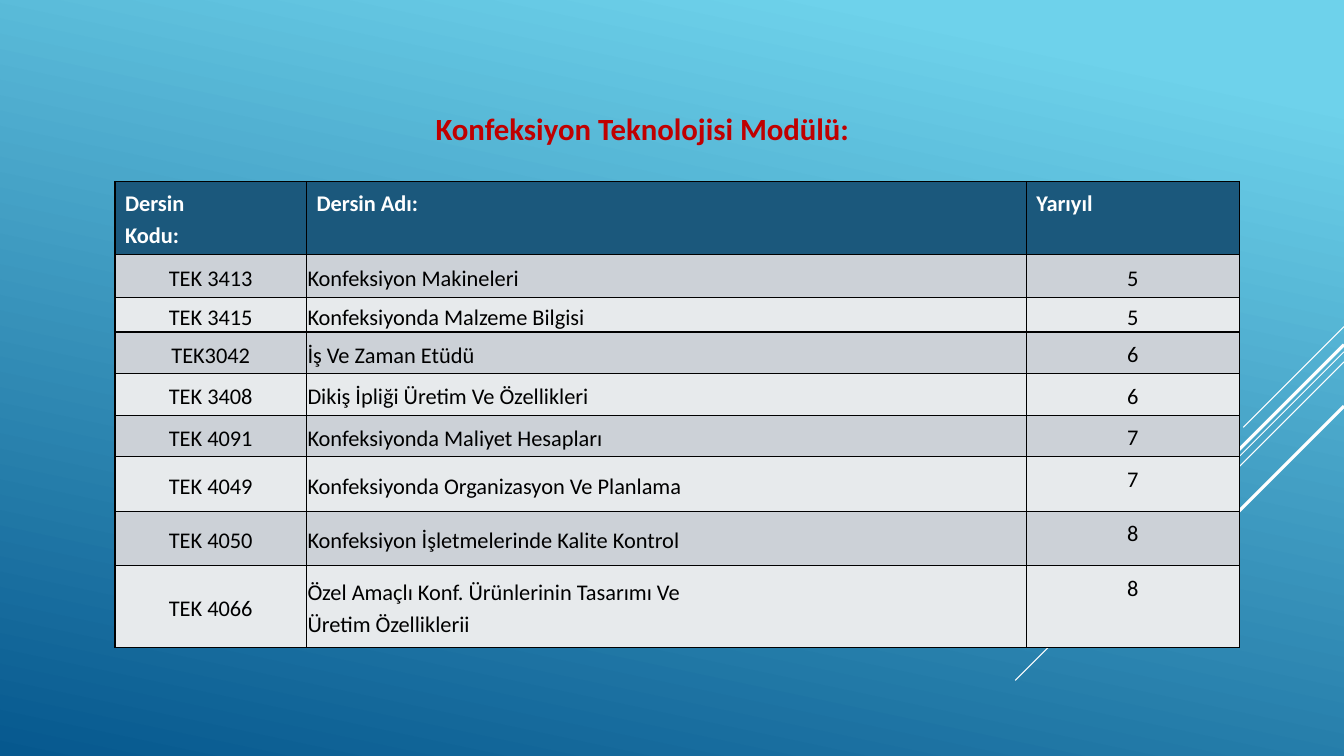
from lxml import etree
from pptx import Presentation
from pptx import util as u
from pptx.dml import color
from pptx.enum import shapes, text
from pptx.oxml import ns

TITLE = "Konfeksiyon Teknolojisi Modülü:"
HEADER = (["Dersin", "Kodu:"], ["Dersin Adı:"], ["Yarıyıl"])
COURSES = [
    ("TEK 3413", ["Konfeksiyon Makineleri"], "5"),
    ("TEK 3415", ["Konfeksiyonda Malzeme Bilgisi"], "5"),
    ("TEK3042", ["İş Ve Zaman Etüdü"], "6"),
    ("TEK 3408", ["Dikiş İpliği Üretim Ve Özellikleri"], "6"),
    ("TEK 4091", ["Konfeksiyonda Maliyet Hesapları"], "7"),
    ("TEK 4049", ["Konfeksiyonda Organizasyon Ve Planlama"], "7"),
    ("TEK 4050", ["Konfeksiyon İşletmelerinde Kalite Kontrol"], "8"),
    ("TEK 4066", ["Özel Amaçlı Konf. Ürünlerinin Tasarımı Ve", "Üretim Özelliklerii"], "8"),
]
COLUMN_WIDTHS = (1.9, 7.14, 2.11)
ROW_HEIGHTS = (0.61, 0.43, 0.34, 0.39, 0.39, 0.39, 0.54, 0.54, 0.81)
BAND_FILLS = ("CCD1D7", "E7EAEC")
BACKGROUND = ((0.1, "6ED2EB"), (1, "06588E"))
# Diagonals: height at the right edge, run to the left, line width
DIAGONALS = [(3.24, 1, 0.75), (3.49, 3.26, 0.75), (3.59, 2.07, 0.75),
             (3.42, 1.91, 2.25), (4.03, 1.39, 2.25)]
WIDTH, HEIGHT = 13.33, 7.5


def rgb(value):
    return color.RGBColor.from_string(value)


def write(frame, lines, size, hue, bold=False, align=text.PP_ALIGN.LEFT, spacing=1):
    for index, line in enumerate(lines):
        para = frame.paragraphs[0] if index == 0 else frame.add_paragraph()
        para.alignment = align
        para.line_spacing = spacing
        span = para.add_run()
        span.text = line
        span.font.name = "Calibri"
        span.font.size = u.Pt(size)
        span.font.bold = bold
        span.font.color.rgb = rgb(hue)


def add_borders(cell):
    properties = cell._tc.get_or_add_tcPr()
    for side in ("a:lnL", "a:lnR", "a:lnT", "a:lnB"):
        border = etree.SubElement(properties, ns.qn(side), w=str(u.Pt(1)))
        fill = etree.SubElement(border, ns.qn("a:solidFill"))
        etree.SubElement(fill, ns.qn("a:srgbClr"), val="000000")


def fill_cell(cell, lines, fill, tight, **style):
    add_borders(cell)
    cell.fill.solid()
    cell.fill.fore_color.rgb = rgb(fill)
    if tight:
        cell.vertical_anchor = text.MSO_ANCHOR.MIDDLE
        cell.margin_left = cell.margin_right = cell.margin_top = u.Inches(0.01)
        cell.margin_bottom = 0
    write(cell.text_frame, lines, 16, spacing=1.15, **style)


deck = Presentation()
deck.slide_width, deck.slide_height = u.Inches(WIDTH), u.Inches(HEIGHT)
page = deck.slides.add_slide(deck.slide_layouts[5])

# Background gradient, 102 degrees clockwise
backdrop = page.background.fill
backdrop.gradient()
backdrop.gradient_angle = 360 - 102
for stop, (position, hue) in zip(backdrop.gradient_stops, BACKGROUND):
    stop.position = position
    stop.color.rgb = rgb(hue)

# Diagonal lines at 45 degrees from the right edge
for top, run, weight in DIAGONALS:
    diagonal = page.shapes.add_connector(
        shapes.MSO_CONNECTOR.STRAIGHT, u.Inches(WIDTH), u.Inches(top),
        u.Inches(WIDTH - run), u.Inches(top + run))
    diagonal.line.color.rgb = rgb("FFFFFF")
    diagonal.line.width = u.Pt(weight)
    etree.SubElement(diagonal._element.spPr, ns.qn("a:effectLst"))

# Course table
frame = page.shapes.add_table(
    len(ROW_HEIGHTS), len(COLUMN_WIDTHS), u.Inches(1.14), u.Inches(1.8),
    u.Inches(sum(COLUMN_WIDTHS)), u.Inches(sum(ROW_HEIGHTS)))
table = frame.table
for column, width in zip(table.columns, COLUMN_WIDTHS):
    column.width = u.Inches(width)
for row, height in zip(table.rows, ROW_HEIGHTS):
    row.height = u.Inches(height)

for column, lines in enumerate(HEADER):
    fill_cell(table.cell(0, column), lines, "1B587C", False, hue="FFFFFF", bold=True)
for row, (code, name, term) in enumerate(COURSES, 1):
    for column, lines in enumerate(([code], name, [term])):
        tight = column < 2 or row < 3
        align = text.PP_ALIGN.LEFT if column == 1 else text.PP_ALIGN.CENTER
        fill_cell(table.cell(row, column), lines, BAND_FILLS[(row - 1) % 2], tight,
                  hue="000000", align=align)

# Title
title = page.shapes.title
title.left, title.top = u.Inches(4.22), u.Inches(1.04)
title.width, title.height = u.Inches(8.19), u.Inches(0.47)
title.text_frame.word_wrap = True
title.text_frame.auto_size = text.MSO_AUTO_SIZE.NONE
title.text_frame.vertical_anchor = text.MSO_ANCHOR.TOP
write(title.text_frame, [TITLE], 22, "C00000", bold=True)

deck.save("out.pptx")
